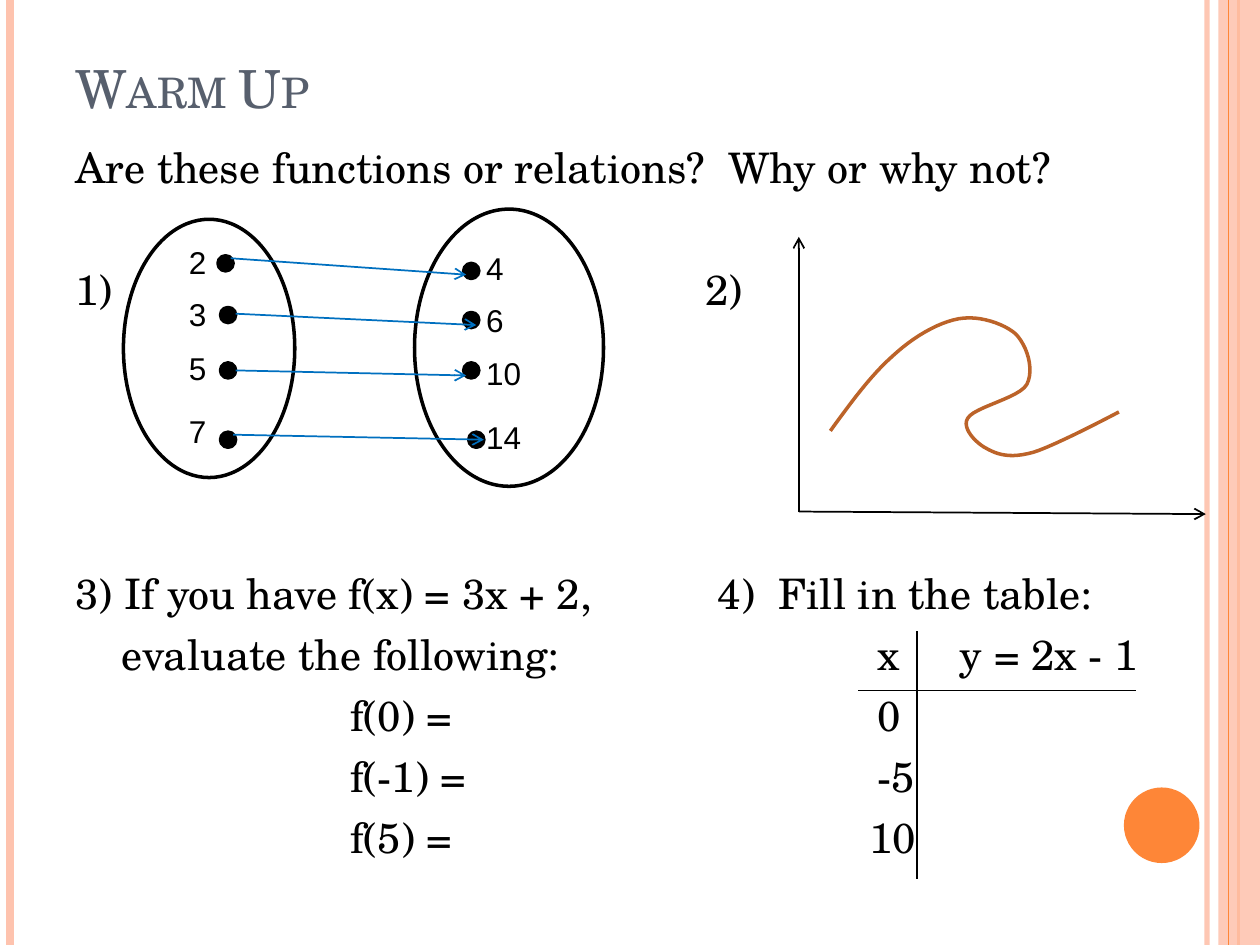
from typing import NamedTuple

from lxml import etree
from pptx import Presentation
from pptx import util as u
from pptx.dml.color import RGBColor
from pptx.enum import shapes, text
from pptx.oxml import ns

COLORS = {
    "black": "000000", "white": "FFFFFF", "orange": "FE8637", "peach": "FEC3AE",
    "title": "575F6D", "mapping": "0070C0", "curve": "BC6329",
}
SERIF = "TeX Gyre Schola"
BODY_TOP = 1.07
ROW_PITCH = 0.484
DOT_SIZE = 0.12
CURVE_STEPS = 12


class Point(NamedTuple):
    x: float
    y: float


class Stroke(NamedTuple):
    start: Point
    end: Point
    color: str = "black"
    width: float = 1
    arrow: bool = False
    opacity: int = 100


class TextBlock(NamedTuple):
    """Consecutive rows of body text; row counts pitches from the body top."""
    left: float
    row: int
    width: float
    lines: list[str]


class Mapping(NamedTuple):
    source: str
    source_top: float
    source_dot: Point
    target: str
    target_top: float
    target_dot: Point
    arrow_start: Point
    arrow_end: Point


EDGE_LINES = [
    Stroke(Point(9.58, 0), Point(9.58, 7.5), "peach", 3, opacity=93),
    Stroke(Point(0.08, 0), Point(0.08, 7.5), "peach", 4.5),
    Stroke(Point(9.83, 0), Point(9.83, 7.5), "orange", 1.5),
]
INNER_EDGE = Stroke(Point(9.75, 0), Point(9.75, 7.5), "orange", 0.75)

BODY = [
    TextBlock(0.5, 0, 9.07, ["Are these functions or relations?  Why or why not?"]),
    TextBlock(0.5, 2, 0.6, ["1)"]),
    TextBlock(5.5, 2, 0.6, ["2)"]),
    TextBlock(0.5, 7, 4.8, ["3) If you have f(x) = 3x + 2,"]),
    TextBlock(0.87, 8, 4.2, ["evaluate the following:"]),
    TextBlock(2.68, 9, 1.6, ["f(0) =", "f(-1) =", "f(5) ="]),
    TextBlock(5.6, 7, 3.8, ["4)  Fill in the table:"]),
    TextBlock(6.87, 8, 0.7, ["x", "0", "-5"]),
    TextBlock(6.8, 11, 0.7, ["10"]),
    TextBlock(7.52, 8, 1.9, ["y = 2x - 1"]),
]

MAPPINGS = [
    Mapping("2", 1.88, Point(1.73, 2.03), "4", 1.93, Point(3.68, 2.09),
            Point(1.83, 2.05), Point(3.7, 2.18)),
    Mapping("3", 2.29, Point(1.75, 2.44), "6", 2.34, Point(3.68, 2.48),
            Point(1.87, 2.49), Point(3.78, 2.58)),
    Mapping("5", 2.72, Point(1.75, 2.88), "10", 2.76, Point(3.68, 2.88),
            Point(1.87, 2.94), Point(3.7, 2.98)),
    Mapping("7", 3.22, Point(1.75, 3.43), "14", 3.27, Point(3.72, 3.43),
            Point(1.85, 3.45), Point(3.84, 3.49)),
]

ORIGIN = Point(6.34, 4.06)
AXES = [
    Stroke(ORIGIN, Point(9.57, 4.08), arrow=True),
    Stroke(ORIGIN, Point(6.34, 1.88), arrow=True),
]
TABLE_RULES = [
    Stroke(Point(7.28, 5.01), Point(7.28, 6.98)),
    Stroke(Point(6.81, 5.48), Point(9.02, 5.48)),
]

# Bezier knots, each followed by two control points up to the last knot.
CURVE = [Point(*pair) for pair in [
    (6.59, 3.42), (6.75, 3.2), (6.91, 2.98), (7.08, 2.83), (7.24, 2.68),
    (7.44, 2.56), (7.61, 2.53), (7.77, 2.5), (7.97, 2.57), (8.06, 2.65),
    (8.15, 2.74), (8.21, 2.93), (8.15, 3.05), (8.09, 3.16), (7.73, 3.23),
    (7.68, 3.32), (7.63, 3.4), (7.75, 3.52), (7.83, 3.56), (7.92, 3.61),
    (8.02, 3.64), (8.2, 3.59), (8.37, 3.54), (8.88, 3.27), (8.88, 3.27),
]]


def rgb(name: str) -> RGBColor:
    return RGBColor.from_string(COLORS[name])


def set_opacity(element, percent: int) -> None:
    color = next(element.iter(ns.qn("a:srgbClr")))
    etree.SubElement(color, ns.qn("a:alpha")).set("val", str(percent * 1000))


def add_stroke(slide, stroke: Stroke) -> None:
    connector = slide.shapes.add_connector(
        shapes.MSO_CONNECTOR.STRAIGHT,
        *map(u.Inches, (*stroke.start, *stroke.end)))
    connector.line.color.rgb = rgb(stroke.color)
    connector.line.width = u.Pt(stroke.width)
    properties = connector.element.spPr
    if stroke.opacity < 100:
        set_opacity(properties, stroke.opacity)
    if stroke.arrow:
        line = properties.find(ns.qn("a:ln"))
        etree.SubElement(line, ns.qn("a:tailEnd")).set("type", "arrow")
    etree.SubElement(properties, ns.qn("a:effectLst"))


def add_figure(slide, kind, left: float, top: float, width: float, height: float,
               fill: str, outline: str | None = None):
    shape = slide.shapes.add_shape(kind, *map(u.Inches, (left, top, width, height)))
    shape.shadow.inherit = False
    shape.fill.solid()
    shape.fill.fore_color.rgb = rgb(fill)
    if outline:
        shape.line.color.rgb = rgb(outline)
        shape.line.width = u.Pt(2)
    else:
        shape.line.fill.background()
    return shape


def add_text(slide, left: float, top: float, width: float, height: float,
             lines: list[str], size: float, font: str = SERIF,
             color: str = "black", space_before: float = 0):
    box = slide.shapes.add_textbox(*map(u.Inches, (left, top, width, height)))
    frame = box.text_frame
    frame.word_wrap = True
    frame.text = "\n".join(lines)
    for paragraph in frame.paragraphs:
        paragraph.space_before = u.Pt(space_before)
        paragraph.font.size = u.Pt(size)
        paragraph.font.name = font
        paragraph.font.color.rgb = rgb(color)
    return frame


def add_title(slide) -> None:
    frame = add_text(slide, 0.5, 0.3, 8.17, 0.69, ["Warm Up"], 30, color="title")
    frame.vertical_anchor = text.MSO_ANCHOR.BOTTOM
    next(frame.paragraphs[0]._p.iter(ns.qn("a:defRPr"))).set("cap", "small")


def bezier_point(knots: list[Point], t: float) -> Point:
    weights = ((1 - t) ** 3, 3 * t * (1 - t) ** 2, 3 * t ** 2 * (1 - t), t ** 3)
    return Point(sum(w * p.x for w, p in zip(weights, knots)),
                 sum(w * p.y for w, p in zip(weights, knots)))


def add_curve(slide) -> None:
    points = [bezier_point(CURVE[first:first + 4], step / CURVE_STEPS)
              for first in range(0, len(CURVE) - 1, 3)
              for step in range(1, CURVE_STEPS + 1)]
    builder = slide.shapes.build_freeform(*map(u.Inches, CURVE[0]))
    builder.add_line_segments([tuple(map(u.Inches, point)) for point in points],
                              close=False)
    curve = builder.convert_to_shape()
    curve.shadow.inherit = False
    curve.fill.background()
    curve.line.color.rgb = rgb("curve")
    curve.line.width = u.Pt(2)


def add_mapping_diagram(slide) -> None:
    oval = shapes.MSO_SHAPE.OVAL
    add_figure(slide, oval, 0.98, 1.74, 1.36, 2.05, "white", "black")
    add_figure(slide, oval, 3.29, 1.66, 1.5, 2.2, "white", "black")
    for item in MAPPINGS:
        add_text(slide, 1.4, item.source_top, 0.47, 0.4, [item.source], 18, "Arial")
        add_text(slide, 3.76, item.target_top, 0.63, 0.4, [item.target], 18, "Arial")
        for dot in (item.source_dot, item.target_dot):
            add_figure(slide, oval, *dot, DOT_SIZE, DOT_SIZE, "black", "black")
        add_stroke(slide, Stroke(item.arrow_start, item.arrow_end, "mapping", arrow=True))


def main() -> None:
    presentation = Presentation()
    presentation.slide_width, presentation.slide_height = u.Inches(10), u.Inches(7.5)
    slide = presentation.slides.add_slide(presentation.slide_layouts[6])
    for stroke in EDGE_LINES:
        add_stroke(slide, stroke)
    band = add_figure(slide, shapes.MSO_SHAPE.RECTANGLE, 9.67, 0, 0.33, 7.5, "peach")
    set_opacity(band.element.spPr, 87)
    add_stroke(slide, INNER_EDGE)
    add_figure(slide, shapes.MSO_SHAPE.OVAL, 8.92, 6.25, 0.6, 0.6, "orange")
    add_title(slide)
    for block in BODY:
        add_text(slide, block.left, BODY_TOP + block.row * ROW_PITCH, block.width,
                 ROW_PITCH * len(block.lines) + 0.1, block.lines, 24, space_before=6)
    add_mapping_diagram(slide)
    for stroke in AXES + TABLE_RULES:
        add_stroke(slide, stroke)
    add_curve(slide)
    presentation.save("out.pptx")


if __name__ == "__main__":
    main()
